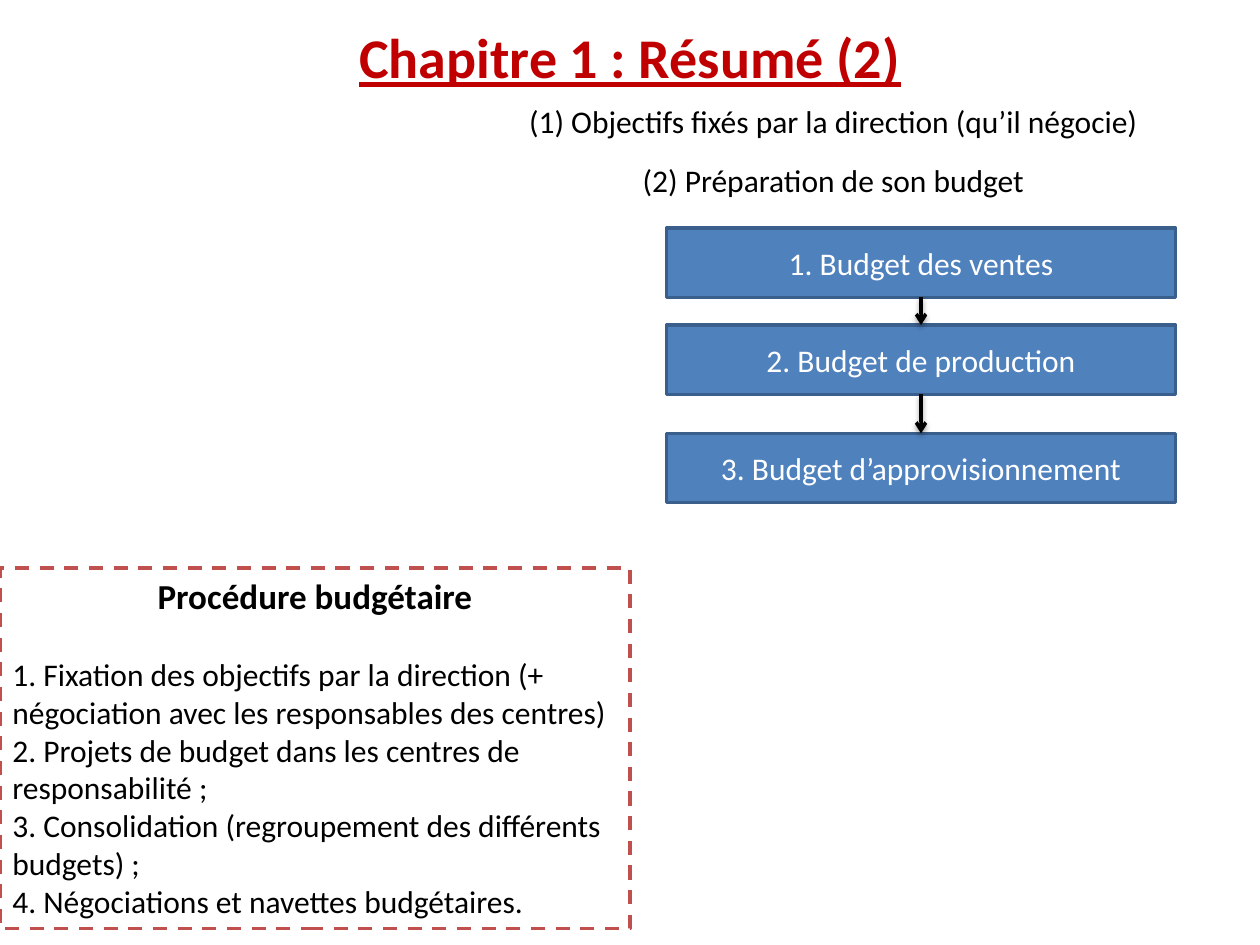
from lxml import etree
from pptx import Presentation
from pptx import util as u
from pptx.dml.color import RGBColor
from pptx.enum import dml, shapes, text
from pptx.oxml import ns

PX = 9144
WHITE = RGBColor(0xFF, 0xFF, 0xFF)
BLACK = RGBColor(0, 0, 0)
CRIMSON = RGBColor(0xC0, 0x00, 0x00)
RED = RGBColor(0xC0, 0x50, 0x4D)
BLUE = RGBColor(0x4F, 0x81, 0xBD)
NAVY = RGBColor(0x3A, 0x5F, 0x8C)

CENTER = text.PP_ALIGN.CENTER
LEFT = text.PP_ALIGN.LEFT


class Page:
    font = "Calibri"
    size = 18
    width = 2

    def __init__(self, deck):
        self.slide = deck.slides.add_slide(deck.slide_layouts[5])

    def place(self, shape, box):
        shape.left, shape.top, shape.width, shape.height = (u.Emu(n * PX) for n in box)

    def paint(self, shape, fill, line=None):
        shape.fill.solid()
        shape.fill.fore_color.rgb = fill
        if line is not None:
            shape.line.color.rgb = line
            shape.line.width = u.Pt(self.width)

    def letter(self, para, words, color=BLACK, size=size, bold=False, align=CENTER):
        para.alignment = align
        run = para.add_run()
        run.text = words
        font = run.font
        font.name, font.size, font.bold = self.font, u.Pt(size), bold
        font.color.rgb = color
        return run

    def title(self, words, box):
        shape = self.slide.shapes.title
        self.place(shape, box)
        self.paint(shape, WHITE)
        frame = shape.text_frame
        frame.auto_size = text.MSO_AUTO_SIZE.NONE
        frame.vertical_anchor = text.MSO_ANCHOR.TOP
        run = self.letter(frame.paragraphs[0], words, CRIMSON, 32, True)
        run.font.underline = True

    def label(self, words, box, **style):
        shape = self.slide.shapes.add_textbox(0, 0, 0, 0)
        self.place(shape, box)
        self.paint(shape, WHITE)
        shape.text_frame.word_wrap = True
        self.letter(shape.text_frame.paragraphs[0], words, **style)
        return shape

    def panel(self, head, items, box):
        shape = self.label(head, box, size=20, bold=True)
        self.paint(shape, WHITE, RED)
        shape.line.dash_style = dml.MSO_LINE.DASH
        for rank, item in enumerate(items):
            para = shape.text_frame.add_paragraph()
            para.space_before = u.Pt(0 if rank else 22)
            self.letter(para, item, align=LEFT)

    def step(self, words, box):
        shape = self.slide.shapes.add_shape(shapes.MSO_SHAPE.RECTANGLE, 0, 0, 0, 0)
        self.place(shape, box)
        shape.shadow.inherit = False
        self.paint(shape, BLUE, NAVY)
        shape.text_frame.word_wrap = True
        shape.text_frame.vertical_anchor = text.MSO_ANCHOR.MIDDLE
        self.letter(shape.text_frame.paragraphs[0], words, WHITE)
        return shape

    def arrow(self, start, end):
        link = self.slide.shapes.add_connector(shapes.MSO_CONNECTOR.STRAIGHT, 0, 0, 0, 0)
        link.begin_connect(start, 2)
        link.end_connect(end, 0)
        link.line.color.rgb = BLACK
        link.line.width = u.Pt(self.width)
        props = link.element.spPr
        etree.SubElement(props.get_or_add_ln(), ns.qn("a:tailEnd"), type="arrow")
        effects = etree.SubElement(props, ns.qn("a:effectLst"))
        shade = etree.SubElement(
            effects, ns.qn("a:outerShdw"), blurRad="40000", dist="20000",
            dir="5400000", rotWithShape="0")
        color = etree.SubElement(shade, ns.qn("a:srgbClr"), val=str(BLACK))
        etree.SubElement(color, ns.qn("a:alpha"), val="38000")


def main():
    deck = Presentation()
    deck.slide_width, deck.slide_height = u.Emu(1000 * PX), u.Emu(750 * PX)
    page = Page(deck)

    page.title("Chapitre 1 : Résumé (2)", (50, 13, 900, 125))
    page.panel("Procédure budgétaire", (
        "1. Fixation des objectifs par la direction (+ négociation avec les responsables des centres)",
        "2. Projets de budget dans les centres de responsabilité ;",
        "3. Consolidation (regroupement des différents budgets) ;",
        "4. Négociations et navettes budgétaires.",
    ), (0, 451, 500, 286))

    page.label("(1) Objectifs fixés par la direction (qu’il négocie)", (390, 76, 543, 40))
    page.label("(2) Préparation de son budget", (390, 123, 543, 40))

    steps = [page.step(words, (529, top, 404, 55)) for words, top in (
        ("1. Budget des ventes", 181),
        ("2. Budget de production", 258),
        ("3. Budget d’approvisionnement", 344),
    )]
    for start, end in zip(steps, steps[1:]):
        page.arrow(start, end)

    deck.save("out.pptx")


if __name__ == "__main__":
    main()
